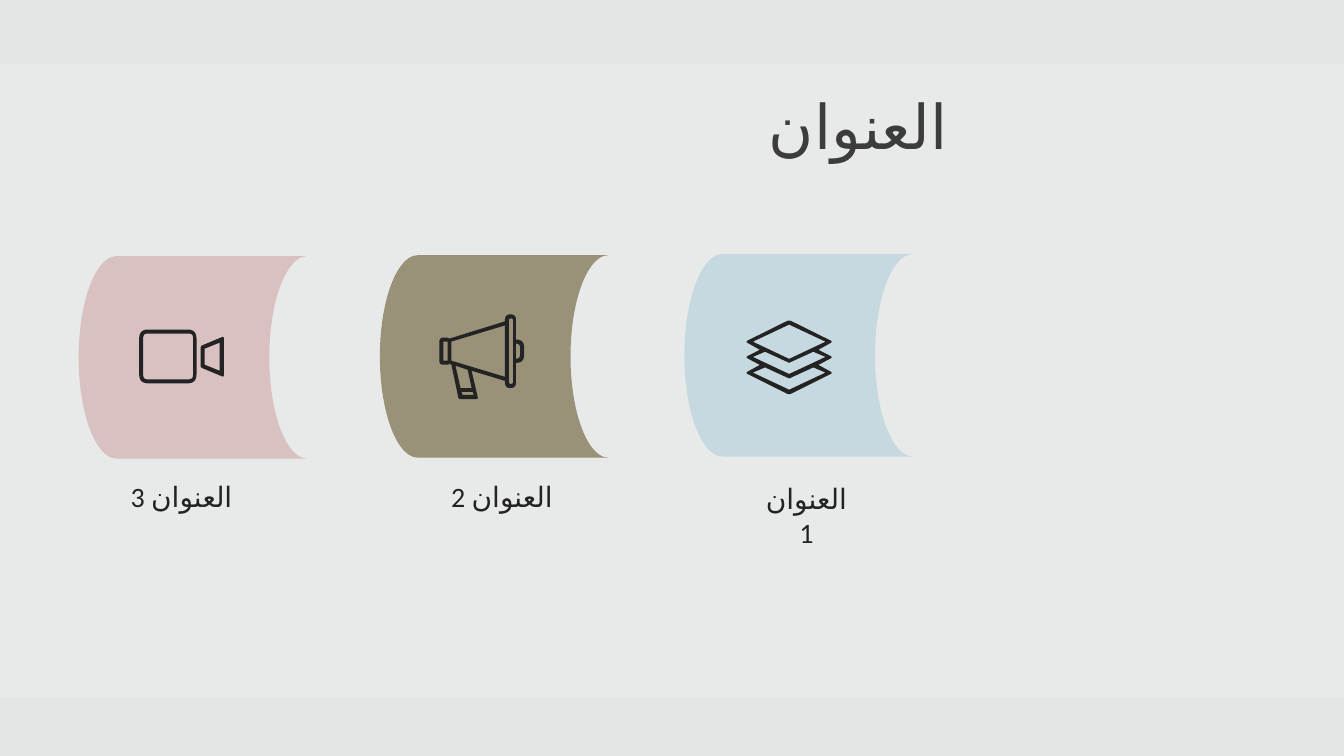
"""Build a right-to-left slide with a title and three icon cards."""
from dataclasses import dataclass
from math import hypot
from typing import NamedTuple

from lxml.etree import SubElement
from pptx import Presentation
from pptx.dml.color import RGBColor
from pptx.enum.lang import MSO_LANGUAGE_ID as Language
from pptx.enum.shapes import MSO_SHAPE as Preset
from pptx.enum.text import MSO_ANCHOR as Anchor, MSO_AUTO_SIZE as AutoSize, PP_ALIGN as Align
from pptx.oxml.ns import qn
from pptx.shapes.autoshape import Shape
from pptx.slide import Slide
from pptx.util import Pt


@dataclass(frozen=True)
class Theme:
    background: str = "E3E6E5"
    band: str = "EDEFED"
    ink: str = "232323"
    title_ink: str = "3C3C3C"
    blue: str = "C7D9E0"
    olive: str = "999278"
    pink: str = "D9C0C1"
    font: str = "Calibri"
    title_size: float = 44
    label_size: float = 20


class Corner(NamedTuple):
    x: float
    y: float
    radius: float = 0


class Box(NamedTuple):
    left: float
    top: float
    width: float
    height: float


Contour = list[Corner]


@dataclass(frozen=True)
class Card:
    label: str
    color: str
    left: float
    top: float
    icon: list[Contour]
    icon_left: float
    icon_top: float
    label_box: Box


THEME = Theme()
CARD_WIDTH, CARD_HEIGHT = 163.4, 144.7
CURVE_STEPS = 6


def polygon(*points: tuple[float, float], radius: float = 0) -> Contour:
    return [Corner(x, y, radius) for x, y in points]


def rectangle(left: float, top: float, right: float, bottom: float, radius: float = 0) -> Contour:
    return polygon((left, top), (right, top), (right, bottom), (left, bottom), radius=radius)


def layer_hole(shift: float) -> Contour:
    return polygon((30.2, 38.2 + shift), (4.3, 26 + shift), (13, 22.3 + shift),
                   (30.2, 30.2 + shift), (47.5, 22.3 + shift), (56.2, 26 + shift))


def layers_outline() -> Contour:
    right_side = [Corner(61.5, 15.1, 2), Corner(51.1, 20.9), Corner(61.5, 26.2, 2),
                  Corner(51.1, 31.7), Corner(61.5, 37.4, 2)]
    left_side = [Corner(60.4 - x, y, radius) for x, y, radius in reversed(right_side)]
    return [Corner(30.2, -0.4, 2), *right_side, Corner(30.2, 53, 2), *left_side]


VIDEO = [
    rectangle(0, 0, 41, 38.5, 6.5),
    rectangle(2.9, 2.9, 38.5, 35.6, 3),
    polygon((43.9, 11.8), (60.5, 4.9), (60.5, 34), (43.9, 27.1), radius=1.4),
    polygon((57.6, 29.5), (46.8, 25.2), (46.8, 13.7), (57.6, 9.4)),
]
MEGAPHONE = [
    [Corner(54.7, 18), Corner(54.7, 0, 3.9), Corner(46.8, 0, 3.9), Corner(46.8, 5),
     Corner(7.2, 17.3), Corner(5.8, 16.6), Corner(0, 16.6, 2.8), Corner(0, 36, 2.8),
     Corner(5.8, 36), Corner(7.2, 35.3), Corner(8.6, 36), Corner(13.7, 60.5, 1.4),
     Corner(27.7, 60.5, 1.4), Corner(23, 40.3), Corner(46.8, 47.5), Corner(46.8, 52.6, 3.9),
     Corner(54.7, 52.6, 3.9), Corner(54.7, 34.6), Corner(60.5, 34.6, 5.5),
     Corner(60.5, 18, 5.5)],
    [Corner(54.7, 20.9), Corner(57.6, 20.9, 2.8), Corner(57.6, 31.7, 2.8), Corner(54.7, 31.7)],
    rectangle(49.7, 2.9, 52.6, 49.7, 1.4),
    polygon((46.8, 44.6), (8.6, 33.1), (8.6, 19.4), (46.8, 7.9)),
    polygon((23, 52.6), (15.1, 52.6), (11.5, 36.7), (20.2, 39.6)),
    polygon((24.5, 57.6), (16.6, 57.6), (15.8, 55.4), (23.8, 55.4)),
    rectangle(2.9, 19.4, 5.8, 33.1),
]
LAYERS = [
    layers_outline(),
    polygon((4.3, 15.1), (30.2, 2.9), (56.2, 15.1), (30.2, 27.4)),
    layer_hole(0),
    layer_hole(11.2),
]
CARDS = [
    Card("العنوان 1", THEME.blue, 488.9, 181.4, LAYERS, 533.5, 229, Box(533.5, 340.6, 85, 31.7)),
    Card("العنوان 2", THEME.olive, 271.4, 182.2, MEGAPHONE, 313.9, 224.6,
         Box(313.9, 339.1, 89.3, 31.7)),
    Card("العنوان 3", THEME.pink, 56.2, 182.9, VIDEO, 99.4, 235.4, Box(83.5, 339.1, 92.2, 31.7)),
]


def toward(start: Corner, end: Corner) -> tuple[float, float]:
    share = start.radius / hypot(end.x - start.x, end.y - start.y)
    return start.x + share * (end.x - start.x), start.y + share * (end.y - start.y)


def trace(contour: Contour) -> list[tuple[int, int]]:
    points = []
    for index, corner in enumerate(contour):
        if not corner.radius:
            points.append((Pt(corner.x), Pt(corner.y)))
            continue
        start = toward(corner, contour[index - 1])
        end = toward(corner, contour[(index + 1) % len(contour)])
        for step in range(CURVE_STEPS + 1):
            t = step / CURVE_STEPS
            x, y = ((1 - t) ** 2 * first + 2 * t * (1 - t) * middle + t ** 2 * last
                    for first, middle, last in zip(start, corner[:2], end))
            points.append((Pt(x), Pt(y)))
    return points


def paint(shape: Shape, color: str) -> None:
    shape.shadow.inherit = False
    shape.fill.solid()
    shape.fill.fore_color.rgb = RGBColor.from_string(color)
    shape.line.fill.background()


def draw_icon(slide: Slide, card: Card) -> None:
    outline, *holes = map(trace, card.icon)
    builder = slide.shapes.build_freeform(*outline[0], scale=1.0)
    builder.add_line_segments(outline[1:], close=True)
    for hole in holes:
        builder.move_to(*hole[0])
        builder.add_line_segments(hole[1:], close=True)
    paint(builder.convert_to_shape(Pt(card.icon_left), Pt(card.icon_top)), THEME.ink)


def write(shape: Shape, text: str, size: float, color: str, alignment: Align) -> None:
    frame = shape.text_frame
    frame.word_wrap = True
    frame.auto_size = AutoSize.SHAPE_TO_FIT_TEXT
    paragraph = frame.paragraphs[0]
    paragraph.alignment = alignment
    paragraph._p.get_or_add_pPr().set("rtl", "1")
    run = paragraph.add_run()
    run.text = text
    run.font.name = THEME.font
    run.font.size = Pt(size)
    run.font.language_id = Language.ARABIC
    run.font.color.rgb = RGBColor.from_string(color)
    SubElement(run._r.get_or_add_rPr(), qn("a:cs")).set("typeface", THEME.font)


def draw_band(slide: Slide) -> None:
    band = slide.shapes.add_shape(Preset.RECTANGLE, 0, Pt(46), Pt(960), Pt(452))
    paint(band, THEME.band)
    color = band._element.spPr.find(qn("a:solidFill"))[0]
    SubElement(color, qn("a:alpha")).set("val", "55000")
    slide.shapes._spTree.insert(2, band._element)


def draw_title(slide: Slide) -> None:
    title = slide.shapes.title
    title.left, title.top, title.width, title.height = map(Pt, Box(166.3, 59, 517.7, 60.5))
    title.text_frame.vertical_anchor = Anchor.BOTTOM
    write(title, "العنوان", THEME.title_size, THEME.title_ink, Align.RIGHT)


def draw_card(slide: Slide, card: Card) -> None:
    body = slide.shapes.add_shape(Preset.FLOWCHART_STORED_DATA, Pt(card.left), Pt(card.top),
                                  Pt(CARD_WIDTH), Pt(CARD_HEIGHT))
    paint(body, card.color)
    draw_icon(slide, card)
    label = slide.shapes.add_textbox(*map(Pt, card.label_box))
    write(label, card.label, THEME.label_size, THEME.ink, Align.CENTER)


def main() -> None:
    presentation = Presentation()
    presentation.slide_width, presentation.slide_height = Pt(960), Pt(540)
    slide = presentation.slides.add_slide(presentation.slide_layouts[5])
    slide.background.fill.solid()
    slide.background.fill.fore_color.rgb = RGBColor.from_string(THEME.background)
    draw_band(slide)
    draw_title(slide)
    for card in CARDS:
        draw_card(slide, card)
    presentation.save("out.pptx")


if __name__ == "__main__":
    main()
